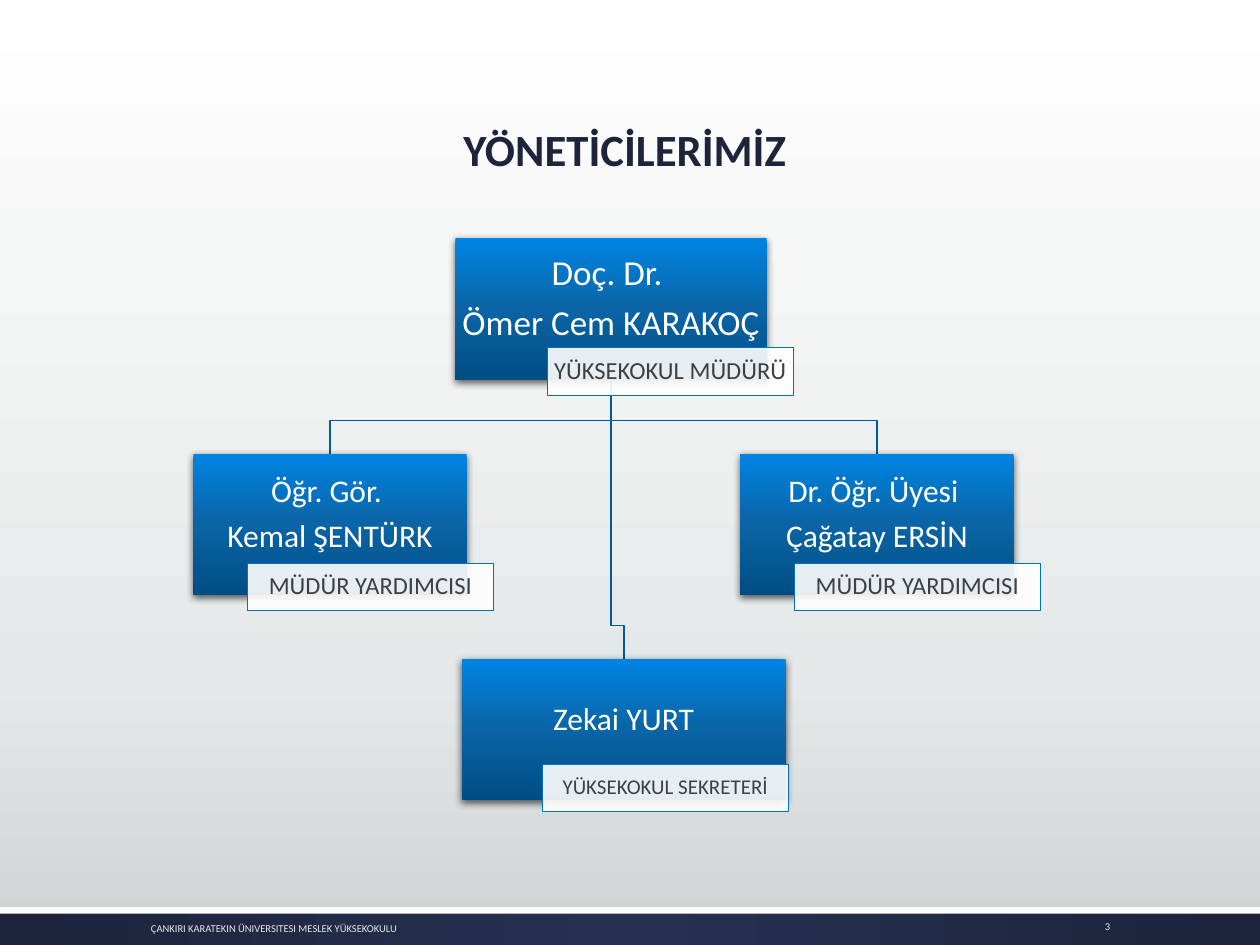
import pptx
import pptx.dml.color
import pptx.enum.shapes
import pptx.enum.text
import pptx.oxml
import pptx.oxml.ns
import pptx.util
from dataclasses import dataclass
from lxml import etree

TITLE = "YÖNETİCİLERİMİZ"
FOOTER = "ÇANKIRI KARATEKIN ÜNIVERSITESI MESLEK YÜKSEKOKULU"
PAGE = "3"

# Centre and width are shares of the slide width; row indexes ROW_TOPS.
# Overhang is how far the role label passes the card's right edge, drop how far
# its top lies below the card's top.
MANAGERS = [
    dict(lines=["Doç. Dr. ", "Ömer Cem KARAKOÇ"], role="YÜKSEKOKUL MÜDÜRÜ", size=20,
         role_size=14, centre=0.485, width=0.247, row=0, overhang=0.021, drop=0.116),
    dict(lines=["Öğr. Gör. ", "Kemal ŞENTÜRK"], role="MÜDÜR YARDIMCISI", size=18,
         role_size=14, centre=0.262, width=0.217, row=1, overhang=0.021, drop=0.116),
    dict(lines=["Dr. Öğr. Üyesi ", "Çağatay ERSİN"], role="MÜDÜR YARDIMCISI", size=18,
         role_size=14, centre=0.696, width=0.217, row=1, overhang=0.021, drop=0.116),
    dict(lines=["Zekai YURT"], role="YÜKSEKOKUL SEKRETERİ", size=18,
         role_size=12, centre=0.495, width=0.257, row=2, overhang=0.002, drop=0.112),
]

WIDTH, HEIGHT = 10, 7.5
ROW_TOPS = [0.252, 0.48, 0.697]
CARD_HEIGHT = 0.15
ROLE_WIDTH, ROLE_HEIGHT = 0.195, 0.05
ELBOW_RISE = 0.035


@dataclass(frozen=True)
class Theme:
    font: str = "Calibri"
    title_size: float = 25.5
    small_size: float = 6
    ink: str = "1D243C"
    white: str = "FFFFFF"
    role_ink: str = "404040"
    role_line: str = "0070C0"
    branch: str = "005A9A"
    footer_ink: str = "E5E8E8"
    backdrop: tuple = ((0, "FFFFFF"), (72, "E5E8E8"), (100, "CDD2D2"))
    card: tuple = ((0, "0084E3"), (50, "0A64A5"), (100, "004D84"))
    band: tuple = ((0, "263050"), (100, "1D243C"))


THEME = Theme()
RECTANGLE = pptx.enum.shapes.MSO_SHAPE.RECTANGLE
ALIGN = pptx.enum.text.PP_ALIGN
ANCHOR = pptx.enum.text.MSO_ANCHOR
qn = pptx.oxml.ns.qn
rgb = pptx.dml.color.RGBColor.from_string


def across(share):
    return pptx.util.Inches(share * WIDTH)


def down(share):
    return pptx.util.Inches(share * HEIGHT)


def box(left, top, width, height):
    return across(left), down(top), across(width), down(height)


def add_xml(parent, tag, **attributes):
    return etree.SubElement(parent, qn(tag), {k: str(v) for k, v in attributes.items()})


def set_gradient(fill, owner, stops, radial=False):
    """Give fill, found under the XML element owner, a downward or radial gradient."""
    fill.gradient()
    gradient = owner.find(".//" + qn("a:gradFill"))
    for child in list(gradient):
        gradient.remove(child)
    stop_list = add_xml(gradient, "a:gsLst")
    for position, colour in stops:
        stop = add_xml(stop_list, "a:gs", pos=position * 1000)
        add_xml(stop, "a:srgbClr", val=colour)
    if radial:
        centre = add_xml(gradient, "a:path", path="circle")
        add_xml(centre, "a:fillToRect", l=50000, t=50000, r=50000, b=50000)
    else:
        add_xml(gradient, "a:lin", ang=5400000, scaled=0)


def write(shape, lines, size, colour, align=ALIGN.CENTER, anchor=ANCHOR.MIDDLE,
          insets=None, bold=False, spacing=None, after=0):
    """Fill shape with lines; after is the paragraph gap as a share of the type size."""
    frame = shape.text_frame
    frame.text = "\n".join(lines)
    frame.word_wrap = True
    frame.vertical_anchor = anchor
    if insets:
        (frame.margin_left, frame.margin_top, frame.margin_right,
         frame.margin_bottom) = map(pptx.util.Inches, insets)
    for paragraph in frame.paragraphs:
        paragraph.alignment = align
        paragraph.line_spacing = spacing
        paragraph.space_after = pptx.util.Pt(size * after)
        for run in paragraph.runs:
            run.font.name = THEME.font
            run.font.size = pptx.util.Pt(size)
            run.font.bold = bold
            run.font.color.rgb = rgb(colour)


def add_rectangle(slide, area):
    rectangle = slide.shapes.add_shape(RECTANGLE, *area)
    rectangle.shadow.inherit = False
    rectangle.line.fill.background()
    return rectangle


def add_band(slide):
    band = add_rectangle(slide, box(0, 0.96, 1, 0.04))
    set_gradient(band.fill, band.element.spPr, THEME.band, radial=True)
    edge = add_rectangle(slide, box(0, 0.96, 1, 0.007))
    edge.fill.solid()
    edge.fill.fore_color.rgb = rgb(THEME.white)


def add_branch(slide, parent, child):
    """Draw the elbow line from the parent's bottom to the child's top."""
    start, end = across(parent["centre"]), across(child["centre"])
    bottom = down(ROW_TOPS[parent["row"]] + CARD_HEIGHT)
    top = ROW_TOPS[child["row"]]
    bend = down(top - ELBOW_RISE)
    builder = slide.shapes.build_freeform(start, bottom)
    builder.add_line_segments([(start, bend), (end, bend), (end, down(top))], close=False)
    branch = builder.convert_to_shape()
    branch.shadow.inherit = False
    branch.fill.background()
    branch.line.color.rgb = rgb(THEME.branch)
    branch.line.width = pptx.util.Pt(1)


def add_card(slide, manager):
    left, top = manager["centre"] - manager["width"] / 2, ROW_TOPS[manager["row"]]
    card = add_rectangle(slide, box(left, top, manager["width"], CARD_HEIGHT))
    set_gradient(card.fill, card.element.spPr, THEME.card)
    shadow = add_xml(card.element.spPr.find(qn("a:effectLst")), "a:outerShdw",
                     blurRad=pptx.util.Pt(4.5), dist=pptx.util.Pt(1.5),
                     dir=5400000, rotWithShape=0)
    add_xml(add_xml(shadow, "a:srgbClr", val="000000"), "a:alpha", val=63000)
    write(card, manager["lines"], manager["size"], THEME.white,
          insets=(0.01, 0.01, 0.01, 0.16), spacing=0.9, after=0.35)

    role_left = left + manager["width"] + manager["overhang"] - ROLE_WIDTH
    role = add_rectangle(slide, box(role_left, top + manager["drop"],
                                    ROLE_WIDTH, ROLE_HEIGHT))
    role.fill.solid()
    role.fill.fore_color.rgb = rgb(THEME.white)
    add_xml(role.element.spPr.find(qn("a:solidFill"))[0], "a:alpha", val=90000)
    role.line.color.rgb = rgb(THEME.role_line)
    role.line.width = pptx.util.Pt(0.5)
    write(role, [manager["role"]], manager["role_size"], THEME.role_ink,
          insets=(0.03, 0.01, 0.03, 0.01), spacing=0.9, after=0.35)


def main():
    deck = pptx.Presentation()
    deck.slide_width, deck.slide_height = across(1), down(1)
    slide = deck.slides.add_slide(deck.slide_layouts[6])
    set_gradient(slide.background.fill, slide.element, THEME.backdrop)
    add_band(slide)

    title = slide.shapes.add_textbox(*box(0.067, 0.068, 0.858, 0.125))
    write(title, [TITLE], THEME.title_size, THEME.ink, anchor=ANCHOR.BOTTOM,
          bold=True, spacing=0.9)

    director, *team = MANAGERS
    for member in team:
        add_branch(slide, director, member)
    for manager in MANAGERS:
        add_card(slide, manager)

    footer = slide.shapes.add_textbox(*box(0.11, 0.965, 0.587, 0.035))
    write(footer, [FOOTER], THEME.small_size, THEME.footer_ink, align=ALIGN.LEFT)
    page = slide.shapes.add_textbox(*box(0.838, 0.963, 0.053, 0.035))
    write(page, [PAGE], THEME.small_size, THEME.footer_ink, align=ALIGN.RIGHT)

    deck.save("out.pptx")


if __name__ == "__main__":
    main()
